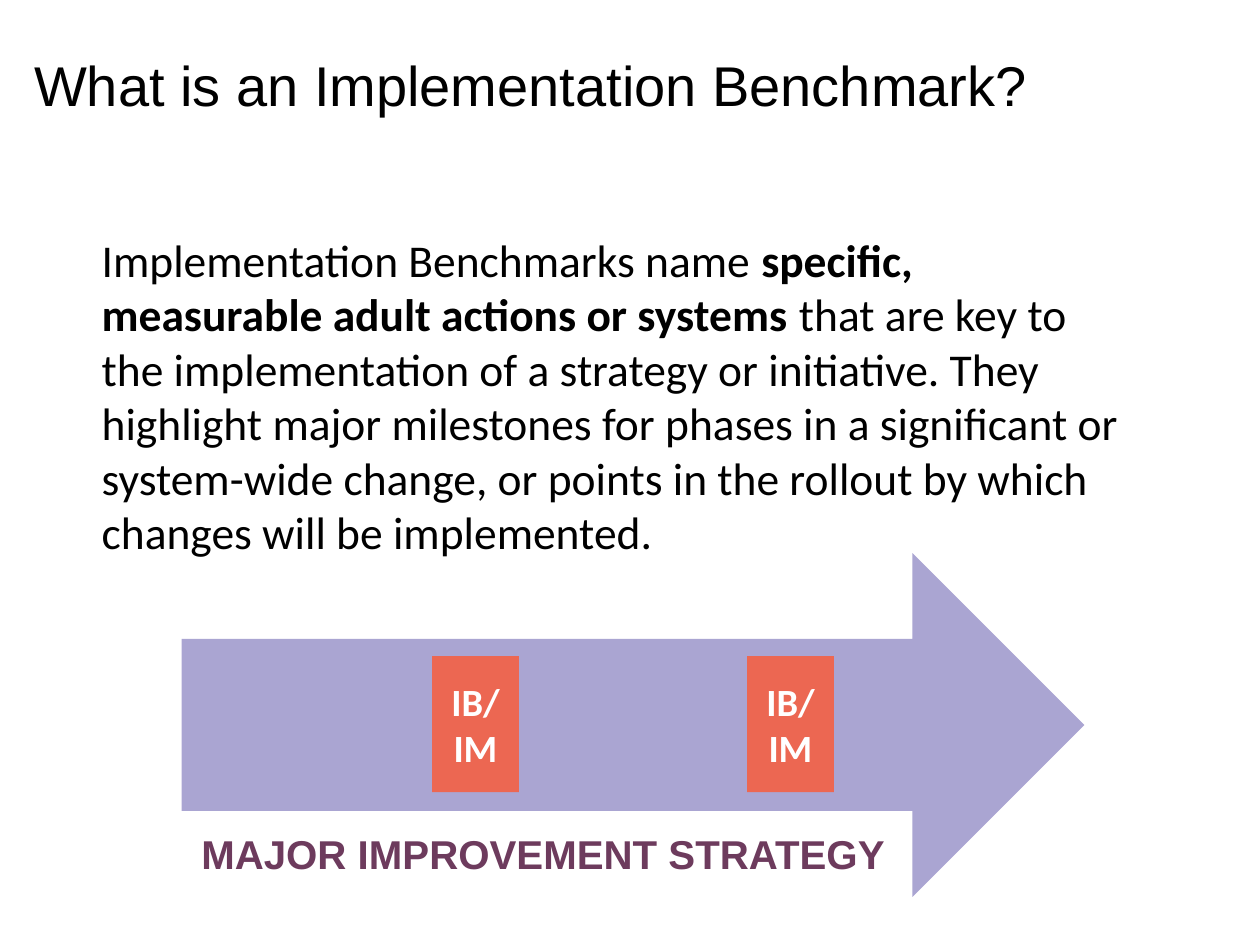
"""Builds the slide that explains implementation benchmarks."""
from pptx import Presentation
from pptx import util as u
from pptx.dml.color import RGBColor
from pptx.enum import shapes, text

COLOURS = {"ink": "000000", "arrow": "AAA5D2", "strategy": "6D3B5D",
           "benchmark": "EC6752", "label": "FFFFFF"}


def write(shape, parts, font, size, colour, align, anchor, inset=0.25):
    frame = shape.text_frame
    frame.word_wrap = True
    frame.vertical_anchor = anchor
    frame.margin_left = frame.margin_right = u.Cm(inset)
    frame.margin_top = frame.margin_bottom = u.Cm(inset)
    paragraph = frame.paragraphs[0]
    paragraph.alignment = align
    for words, bold in parts:
        run = paragraph.add_run()
        run.text = words
        run.font.name = font
        run.font.size = u.Pt(size)
        run.font.bold = bold
        run.font.color.rgb = RGBColor.from_string(COLOURS[colour])


def add_block(kind, left, top, width, height, colour):
    block = slide.shapes.add_shape(kind, u.Cm(left), u.Cm(top), u.Cm(width), u.Cm(height))
    block.shadow.inherit = False
    block.fill.solid()
    block.fill.fore_color.rgb = RGBColor.from_string(COLOURS[colour])
    block.line.fill.background()
    return block


deck = Presentation()
deck.slide_width, deck.slide_height = u.Cm(25.4), u.Cm(19.05)
slide = deck.slides.add_slide(deck.slide_layouts[6])

title = slide.shapes.add_textbox(u.Cm(0.69), u.Cm(0.91), u.Cm(22.1), u.Cm(1.57))
write(title, [("What is an Implementation Benchmark?", False)], "Arial", 32, "ink",
      text.PP_ALIGN.LEFT, text.MSO_ANCHOR.MIDDLE, inset=0)

definition = slide.shapes.add_textbox(u.Cm(1.8), u.Cm(4.42), u.Cm(21.34), u.Cm(7.19))
write(definition, [
    ("Implementation Benchmarks name ", False),
    ("specific, measurable adult actions or systems", True),
    (" that are key to the implementation of a strategy or initiative. They highlight "
     "major milestones for phases in a significant or system-wide change, or points in "
     "the rollout by which changes will be implemented.", False),
], "Calibri", 26, "ink", text.PP_ALIGN.LEFT, text.MSO_ANCHOR.TOP)

add_block(shapes.MSO_SHAPE.RIGHT_ARROW, 3.66, 11.15, 18.2, 6.93, "arrow")

strategy = slide.shapes.add_textbox(u.Cm(3.53), u.Cm(16.46), u.Cm(14.58), u.Cm(1.5))
write(strategy, [("MAJOR IMPROVEMENT STRATEGY", True)], "Arial", 23, "strategy",
      text.PP_ALIGN.RIGHT, text.MSO_ANCHOR.TOP)

for left in (8.71, 15.06):
    benchmark = add_block(shapes.MSO_SHAPE.RECTANGLE, left, 13.23, 1.75, 2.74, "benchmark")
    write(benchmark, [("IB/ IM", True)], "Calibri", 22, "label",
          text.PP_ALIGN.CENTER, text.MSO_ANCHOR.MIDDLE)

deck.save("out.pptx")
